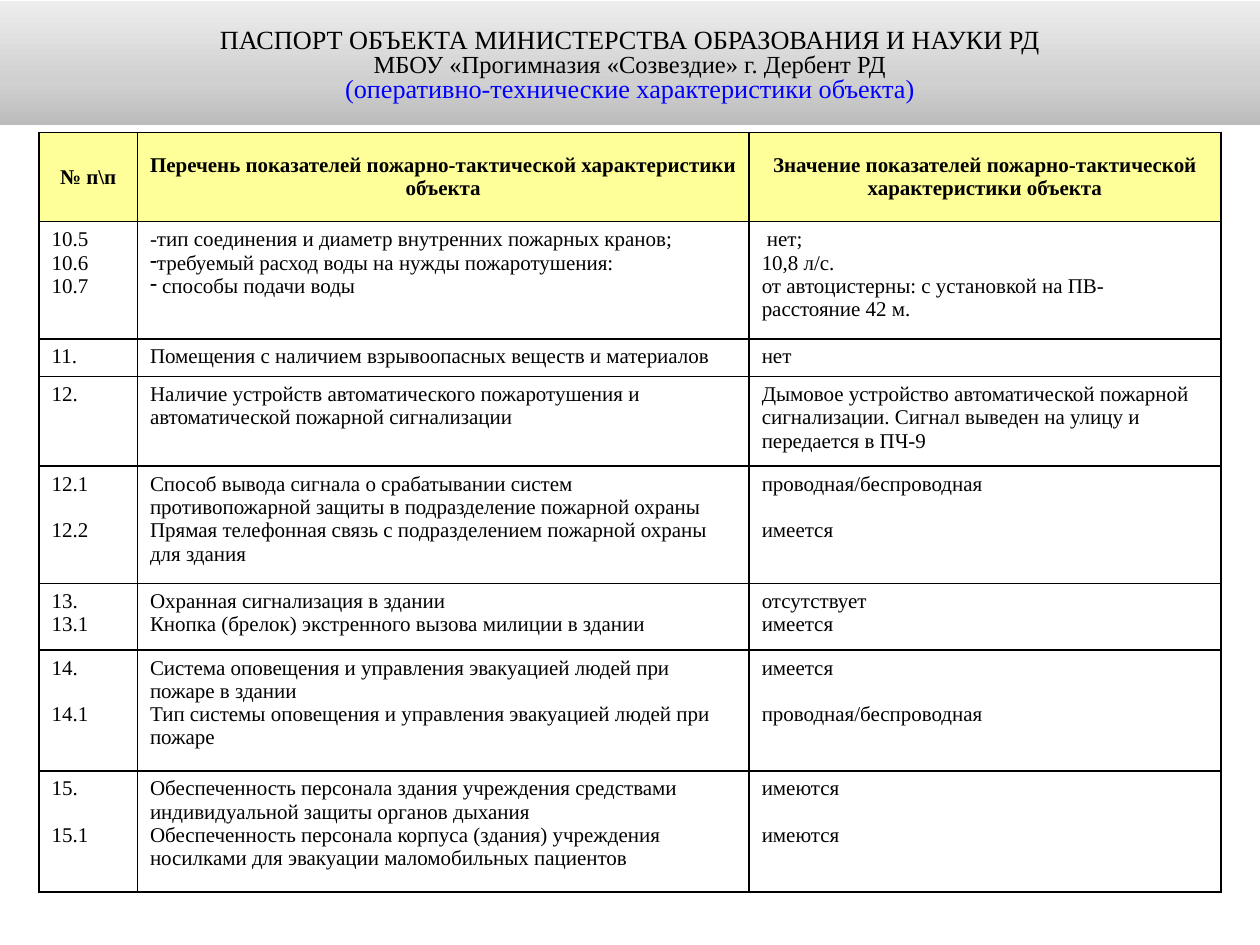
from copy import deepcopy

from lxml import etree
from pptx import Presentation
from pptx.dml.color import RGBColor
from pptx.enum.shapes import MSO_SHAPE
from pptx.enum.text import MSO_ANCHOR, PP_ALIGN
from pptx.oxml.ns import qn
from pptx.util import Inches, Pt

RECT = MSO_SHAPE.RECTANGLE
MIDDLE, TOP = MSO_ANCHOR.MIDDLE, MSO_ANCHOR.TOP
CENTER, LEFT = PP_ALIGN.CENTER, PP_ALIGN.LEFT

BLACK = RGBColor(0x00, 0x00, 0x00)
WHITE = RGBColor(0xFF, 0xFF, 0xFF)
BLUE = RGBColor(0x00, 0x00, 0xFF)
YELLOW = RGBColor(0xFF, 0xFF, 0x99)
BANNER_STOPS = [
    (0, RGBColor(0xBC, 0xBC, 0xBC)),
    (0.35, RGBColor(0xD0, 0xD0, 0xD0)),
    (1, RGBColor(0xED, 0xED, 0xED)),
]

FONT = "Times New Roman"
LINE_GAP = Pt(13.4)
COL_WIDTHS = [0.78, 4.85, 3.74]
ROW_HEIGHTS = [0.71, 0.93, 0.3, 0.71, 0.93, 0.53, 0.96, 0.96]

TITLE = [
    ("ПАСПОРТ ОБЪЕКТА МИНИСТЕРСТВА ОБРАЗОВАНИЯ И НАУКИ РД", 15, BLACK, 1.0),
    ("МБОУ «Прогимназия «Созвездие» г. Дербент РД", 14, BLACK, 0.8),
    ("(оперативно-технические характеристики объекта)", 15, BLUE, 0.8),
]
HEADER = [
    ["№ п\\п"],
    ["Перечень показателей пожарно-тактической характеристики объекта"],
    ["Значение показателей пожарно-тактической характеристики объекта"],
]
ROWS = [
    [["10.5", "10.6", "10.7"],
     ["-тип соединения и диаметр внутренних пожарных кранов;",
      "требуемый расход воды на нужды пожаротушения:",
      " способы подачи воды"],
     [" нет;", "10,8 л/с.",
      "от автоцистерны: с установкой на ПВ- расстояние 42 м."]],
    [["11."],
     ["Помещения с наличием взрывоопасных веществ и материалов"],
     ["нет"]],
    [["12."],
     ["Наличие устройств автоматического пожаротушения и "
      "автоматической пожарной сигнализации"],
     ["Дымовое устройство автоматической пожарной сигнализации. "
      "Сигнал выведен на улицу и передается в ПЧ-9"]],
    [["12.1", "12.2"],
     ["Способ вывода сигнала о срабатывании систем противопожарной "
      "защиты в подразделение пожарной охраны",
      "Прямая телефонная связь с подразделением пожарной охраны для здания"],
     ["проводная/беспроводная", "имеется"]],
    [["13.", "13.1"],
     ["Охранная сигнализация в здании",
      "Кнопка (брелок) экстренного вызова милиции в здании"],
     ["отсутствует", "имеется"]],
    [["14.", "14.1"],
     ["Система оповещения и управления эвакуацией людей при пожаре в здании",
      "Тип системы оповещения и управления эвакуацией людей при пожаре"],
     ["имеется", "проводная/беспроводная"]],
    [["15.", "15.1"],
     ["Обеспеченность персонала здания учреждения средствами "
      "индивидуальной защиты органов дыхания",
      "Обеспеченность персонала корпуса (здания) учреждения носилками "
      "для эвакуации маломобильных пациентов"],
     ["имеются", "имеются"]],
]
SPACED_ROWS = {4, 6, 7}
BULLETS = {(1, 1, 1), (1, 1, 2)}


def add_run(p, text, size, color=BLACK, bold=False):
    r = p.add_run()
    r.text = text
    r.font.name = FONT
    r.font.size = Pt(size)
    r.font.bold = bold
    r.font.color.rgb = color


def add_paragraph(tf, index):
    return tf.paragraphs[0] if index == 0 else tf.add_paragraph()


def add_dash_bullet(p):
    pPr = p._p.get_or_add_pPr()
    pPr.set("marL", "0")
    pPr.set("indent", "0")
    etree.SubElement(pPr, qn("a:buChar")).set("char", "-")


def add_borders(cell):
    tcPr = cell._tc.get_or_add_tcPr()
    for side in ("lnL", "lnR", "lnT", "lnB"):
        ln = etree.SubElement(tcPr, qn(f"a:{side}"), w=str(Pt(1)))
        fill = etree.SubElement(ln, qn("a:solidFill"))
        etree.SubElement(fill, qn("a:srgbClr"), val=str(BLACK))


def add_banner(s, left, top, width, height):
    sp = s.shapes.add_shape(RECT, left, top, width, height)
    sp.shadow.inherit = False
    sp.line.fill.background()
    sp.fill.gradient()
    sp.fill.gradient_angle = 90
    stops = sp._element.spPr.find(qn("a:gradFill")).find(qn("a:gsLst"))
    stops.insert(1, deepcopy(stops[0]))
    for stop, (position, color) in zip(sp.fill.gradient_stops, BANNER_STOPS):
        stop.position = position
        stop.color.rgb = color
    tf = sp.text_frame
    tf.word_wrap = True
    tf.vertical_anchor = MIDDLE
    tf.margin_left = tf.margin_right = Inches(0.09)
    tf.margin_top = tf.margin_bottom = Inches(0.05)
    for i, (text, size, color, spacing) in enumerate(TITLE):
        p = add_paragraph(tf, i)
        p.alignment = CENTER
        p.line_spacing = spacing
        add_run(p, text, size, color)


def fill_cell(cell, row, col, lines):
    is_header = row == 0
    add_borders(cell)
    cell.fill.solid()
    cell.fill.fore_color.rgb = YELLOW if is_header else WHITE
    cell.vertical_anchor = MIDDLE if is_header else TOP
    cell.margin_left = cell.margin_right = Inches(0.1)
    cell.margin_top = cell.margin_bottom = Inches(0.05)
    for i, text in enumerate(lines):
        p = add_paragraph(cell.text_frame, i)
        p.alignment = CENTER if is_header else LEFT
        if i and col != 1 and row in SPACED_ROWS:
            p.space_before = LINE_GAP
        if (row, col, i) in BULLETS:
            add_dash_bullet(p)
        add_run(p, text, 12, bold=is_header)


def add_indicator_table(s, left, top, width, height):
    rows = [HEADER] + ROWS
    table = s.shapes.add_table(
        len(rows), len(COL_WIDTHS), left, top, width, height).table
    table.horz_banding = False
    for column, share in zip(table.columns, COL_WIDTHS):
        column.width = int(width * share / sum(COL_WIDTHS))
    for table_row, share in zip(table.rows, ROW_HEIGHTS):
        table_row.height = int(height * share / sum(ROW_HEIGHTS))
    for row, cells in enumerate(rows):
        for col, lines in enumerate(cells):
            fill_cell(table.cell(row, col), row, col, lines)


def main():
    prs = Presentation()
    prs.slide_width = Inches(10)
    prs.slide_height = Inches(7.5)
    s = prs.slides.add_slide(prs.slide_layouts[6])
    add_indicator_table(
        s, Inches(0.31), Inches(1.05), Inches(9.38), Inches(6.03))
    add_banner(s, Inches(0), Inches(0.01), prs.slide_width, Inches(0.98))
    prs.save("out.pptx")


if __name__ == "__main__":
    main()
